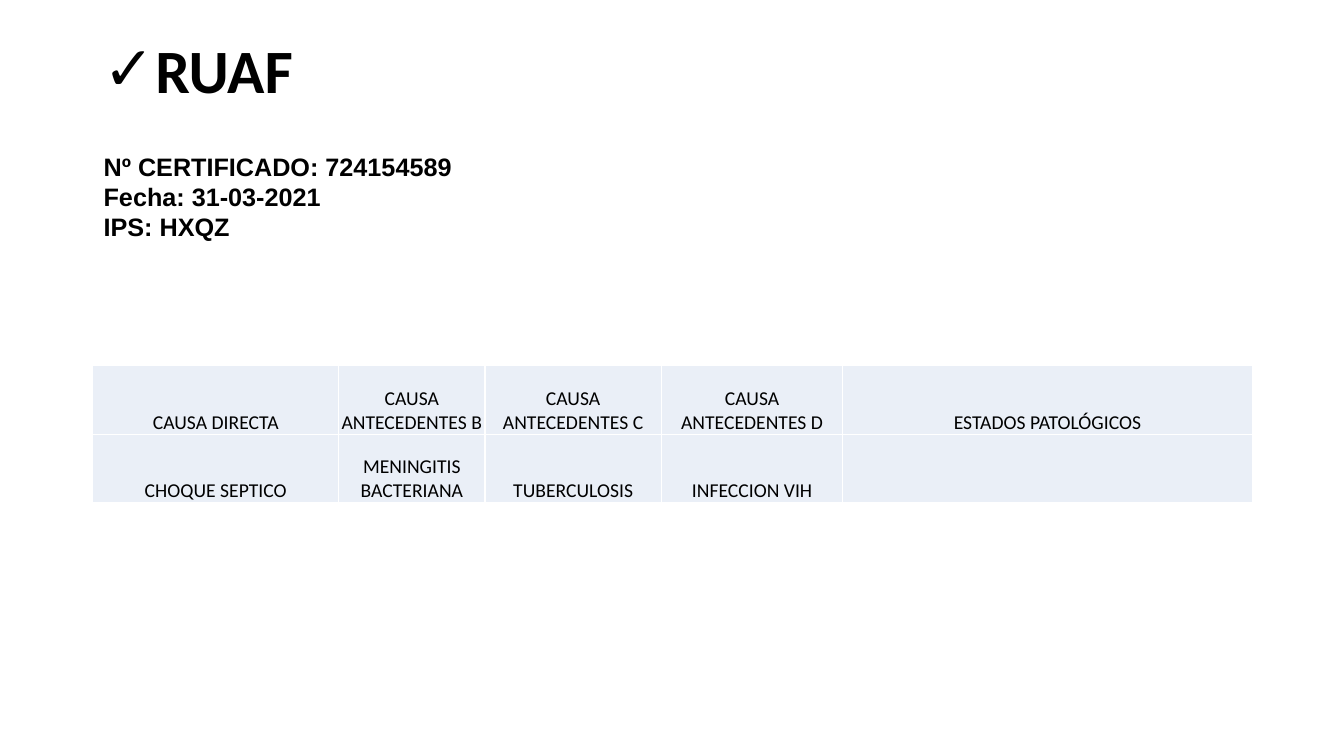
from lxml.etree import SubElement
from pptx import Presentation
from pptx.dml.color import RGBColor
from pptx.enum.text import MSO_ANCHOR, PP_ALIGN
from pptx.oxml.ns import qn
from pptx.util import Inches, Pt

BLACK = RGBColor(0x00, 0x00, 0x00)
WHITE = RGBColor(0xFF, 0xFF, 0xFF)
PALE_BLUE = RGBColor(0xEA, 0xEF, 0xF7)

COLUMN_WIDTHS = [2.44, 1.45, 1.75, 1.8, 4.06]
ROW_HEIGHT = 0.68
CAUSES = [
    ["CAUSA DIRECTA", "CAUSA ANTECEDENTES B", "CAUSA ANTECEDENTES C",
     "CAUSA ANTECEDENTES D", "ESTADOS PATOLÓGICOS"],
    ["CHOQUE SEPTICO", "MENINGITIS BACTERIANA", "TUBERCULOSIS", "INFECCION VIH", ""],
]


def format_text(text_frame, font_name, size, bold=False):
    for paragraph in text_frame.paragraphs:
        for run in paragraph.runs:
            run.font.name = font_name
            run.font.size = Pt(size)
            run.font.bold = bold
            run.font.color.rgb = BLACK


def set_cell_borders(cell, color, width):
    properties = cell._tc.get_or_add_tcPr()
    for position, side in enumerate(("a:lnL", "a:lnR", "a:lnT", "a:lnB")):
        line = SubElement(properties, qn(side), w=str(Pt(width)))
        fill = SubElement(line, qn("a:solidFill"))
        SubElement(fill, qn("a:srgbClr"), val=str(color))
        properties.insert(position, line)


presentation = Presentation()
presentation.slide_width = Inches(13.33)
presentation.slide_height = Inches(7.5)
slide = presentation.slides.add_slide(presentation.slide_layouts[6])

# Title with a check mark bullet
title = slide.shapes.add_textbox(Inches(0.93), Inches(0), Inches(11.5), Inches(1.45))
title_frame = title.text_frame
title_frame.word_wrap = True
title_frame.vertical_anchor = MSO_ANCHOR.MIDDLE
title_frame.text = "RUAF"
title_paragraph = title_frame.paragraphs[0]
title_paragraph.line_spacing = 0.9
format_text(title_frame, "Calibri", 44, bold=True)
title_properties = title_paragraph._p.get_or_add_pPr()
title_properties.set("marL", str(Inches(0.31)))
title_properties.set("indent", str(Inches(-0.31)))
SubElement(title_properties, qn("a:buFont"), typeface="Arial")
SubElement(title_properties, qn("a:buChar"), char="✓")

# Certificate details
certificate = slide.shapes.add_textbox(Inches(0.93), Inches(1.45), Inches(9.5), Inches(1.01))
certificate_frame = certificate.text_frame
certificate_frame.word_wrap = True
certificate_frame.text = "Nº CERTIFICADO: 724154589\nFecha: 31-03-2021\nIPS: HXQZ"
format_text(certificate_frame, "Arial", 18, bold=True)

# Causes of death
table = slide.shapes.add_table(
    len(CAUSES), len(COLUMN_WIDTHS), Inches(0.92), Inches(3.63),
    Inches(sum(COLUMN_WIDTHS)), Inches(ROW_HEIGHT * len(CAUSES))).table
table.first_row = False
table.horz_banding = False
for column, width in zip(table.columns, COLUMN_WIDTHS):
    column.width = Inches(width)
for row, causes in zip(table.rows, CAUSES):
    row.height = Inches(ROW_HEIGHT)
    for cell, cause in zip(row.cells, causes):
        cell.fill.solid()
        cell.fill.fore_color.rgb = PALE_BLUE
        set_cell_borders(cell, WHITE, 1)
        cell.margin_left = cell.margin_right = cell.margin_top = Inches(0.01)
        cell.margin_bottom = 0
        cell.vertical_anchor = MSO_ANCHOR.BOTTOM
        cell.text_frame.text = cause
        cell.text_frame.paragraphs[0].alignment = PP_ALIGN.CENTER
        format_text(cell.text_frame, "Calibri", 14)

presentation.save("out.pptx")
